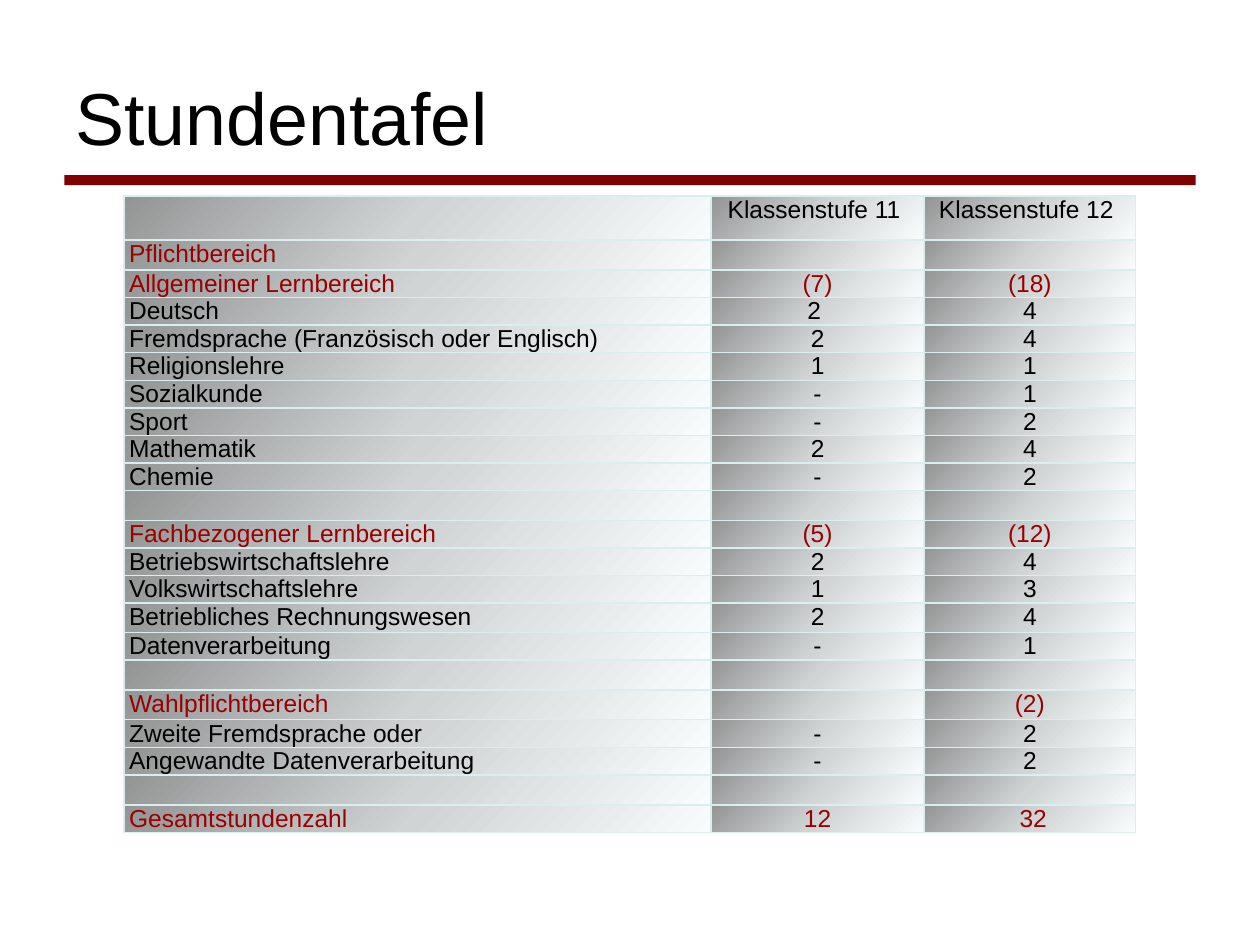
from dataclasses import dataclass

import pptx
import pptx.dml.color
import pptx.enum.shapes
import pptx.enum.text
import pptx.oxml
import pptx.oxml.ns
import pptx.util

Pt = pptx.util.Pt
Rgb = pptx.dml.color.RGBColor.from_string
Align = pptx.enum.text.PP_ALIGN
Anchor = pptx.enum.text.MSO_ANCHOR


@dataclass(frozen=True)
class Theme:
    font: str = "Arial"
    title: int = 42
    body: int = 14
    ink: str = "000000"
    group: str = "990000"
    bar: str = "800000"
    edge: str = "DAEDEF"
    shade: tuple = ((0, "939595"), (50, "D1D4D5"), (100, "F8FCFC"))


THEME = Theme()
WIDTHS = (335.6, 121.6, 121)
HEAD, ROW, TALL = 25.2, 15.75, 16.7

# Subject, hours in year 11, hours in year 12
HOURS = [
    ("", "Klassenstufe 11 ", "Klassenstufe 12 "),
    ("Pflichtbereich", "", ""),
    ("Allgemeiner Lernbereich", "(7)", "(18)"),
    ("Deutsch", "2 ", "4"),
    ("Fremdsprache (Französisch oder Englisch)", "2", "4"),
    ("Religionslehre", "1", "1"),
    ("Sozialkunde", "-", "1"),
    ("Sport", "-", "2"),
    ("Mathematik", "2", "4"),
    ("Chemie", "-", "2"),
    ("", "", ""),
    ("Fachbezogener Lernbereich", "(5)", "(12)"),
    ("Betriebswirtschaftslehre", "2", "4"),
    ("Volkswirtschaftslehre", "1", "3"),
    ("Betriebliches Rechnungswesen", "2", "4"),
    ("Datenverarbeitung", "-", "1"),
    ("", "", ""),
    ("Wahlpflichtbereich", "", "(2)"),
    ("Zweite Fremdsprache oder", "-", "2"),
    ("Angewandte Datenverarbeitung", "-", "2"),
    ("", "", ""),
    ("Gesamtstundenzahl", "12", " 32"),
]
GROUPS = {"Pflichtbereich", "Allgemeiner Lernbereich",
          "Fachbezogener Lernbereich", "Wahlpflichtbereich",
          "Gesamtstundenzahl"}
HEIGHTS = {"": ROW, "Betriebliches Rechnungswesen": TALL}


def style(para, size, color):
    for run in para.runs:
        run.font.name = THEME.font
        run.font.size = Pt(size)
        run.font.color.rgb = Rgb(color)


def add_title(slide, text):
    title = slide.shapes.title
    title.left, title.top = Pt(36), Pt(21.6)
    title.width, title.height = Pt(648), Pt(90)
    frame = title.text_frame
    frame.text = text
    frame.vertical_anchor = Anchor.MIDDLE
    para = frame.paragraphs[0]
    para.alignment = Align.LEFT
    style(para, THEME.title, THEME.ink)


def add_bar(slide):
    """Draw the rule under the title, behind everything else."""
    bar = slide.shapes.add_shape(
        pptx.enum.shapes.MSO_SHAPE.RECTANGLE,
        Pt(36.8), Pt(100), Pt(646.4), Pt(5.8))
    bar.shadow.inherit = False
    bar.fill.solid()
    bar.fill.fore_color.rgb = Rgb(THEME.bar)
    bar.line.fill.background()
    slide.shapes._spTree.insert(2, bar._element)


def paint(cell):
    """Give a cell its four borders and diagonal gradient."""
    space = pptx.oxml.ns.nsdecls("a")
    props = cell._tc.get_or_add_tcPr()
    for side in ("lnL", "lnR", "lnT", "lnB"):
        props.append(pptx.oxml.parse_xml(
            f'<a:{side} {space} w="{Pt(1)}"><a:solidFill>'
            f'<a:srgbClr val="{THEME.edge}"/></a:solidFill></a:{side}>'))
    stops = "".join(
        f'<a:gs pos="{at * 1000}"><a:srgbClr val="{color}"/></a:gs>'
        for at, color in THEME.shade)
    props.append(pptx.oxml.parse_xml(
        f'<a:gradFill {space} rotWithShape="1"><a:gsLst>{stops}</a:gsLst>'
        '<a:lin ang="2700000" scaled="1"/></a:gradFill>'))


def fill_cell(cell, text, color, align):
    cell.margin_left = cell.margin_right = Pt(3)
    cell.margin_top = cell.margin_bottom = 0
    cell.vertical_anchor = Anchor.TOP
    para = cell.text_frame.paragraphs[0]
    para.alignment = align
    if text:
        para.text = text
        style(para, THEME.body, color)
    else:
        end = pptx.oxml.parse_xml(
            f'<a:endParaRPr {pptx.oxml.ns.nsdecls("a")} '
            f'sz="{THEME.body * 100}"/>')
        para._p.append(end)
    paint(cell)


def add_hours(slide):
    heights = [HEAD] + [HEIGHTS.get(row[0], ROW) for row in HOURS[1:]]
    table = slide.shapes.add_table(
        len(HOURS), len(WIDTHS), Pt(70.8), Pt(112),
        Pt(sum(WIDTHS)), Pt(sum(heights))).table
    table.first_row = table.horz_banding = False
    for col, width in zip(table.columns, WIDTHS):
        col.width = Pt(width)
    for row, height, texts in zip(table.rows, heights, HOURS):
        row.height = Pt(height)
        color = THEME.group if texts[0] in GROUPS else THEME.ink
        for i, (cell, text) in enumerate(zip(row.cells, texts)):
            fill_cell(cell, text, color, Align.CENTER if i else Align.LEFT)


def main():
    deck = pptx.Presentation()
    deck.slide_width, deck.slide_height = Pt(720), Pt(540)
    slide = deck.slides.add_slide(deck.slide_layouts[5])
    add_bar(slide)
    add_title(slide, "Stundentafel")
    add_hours(slide)
    deck.save("out.pptx")


if __name__ == "__main__":
    main()
